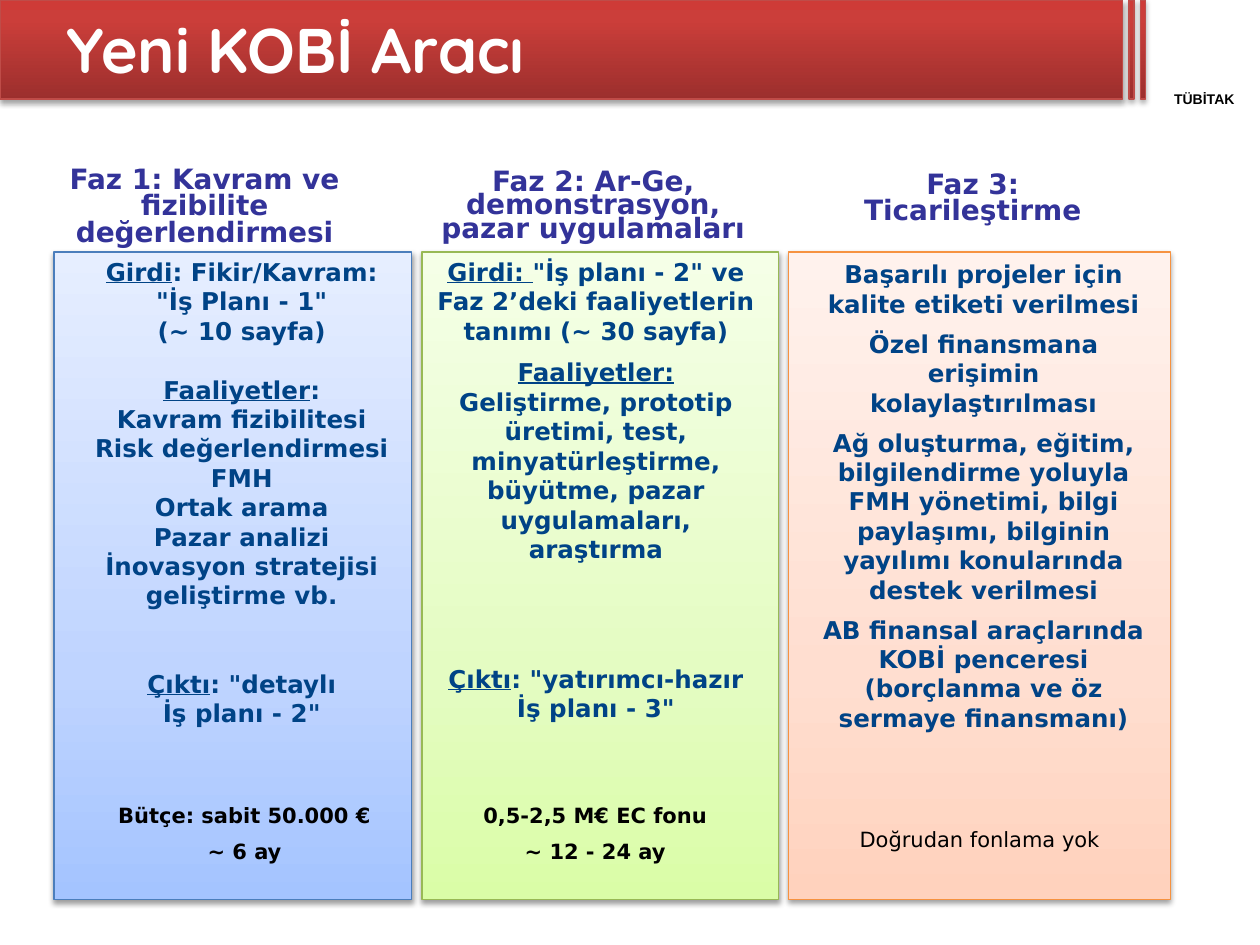
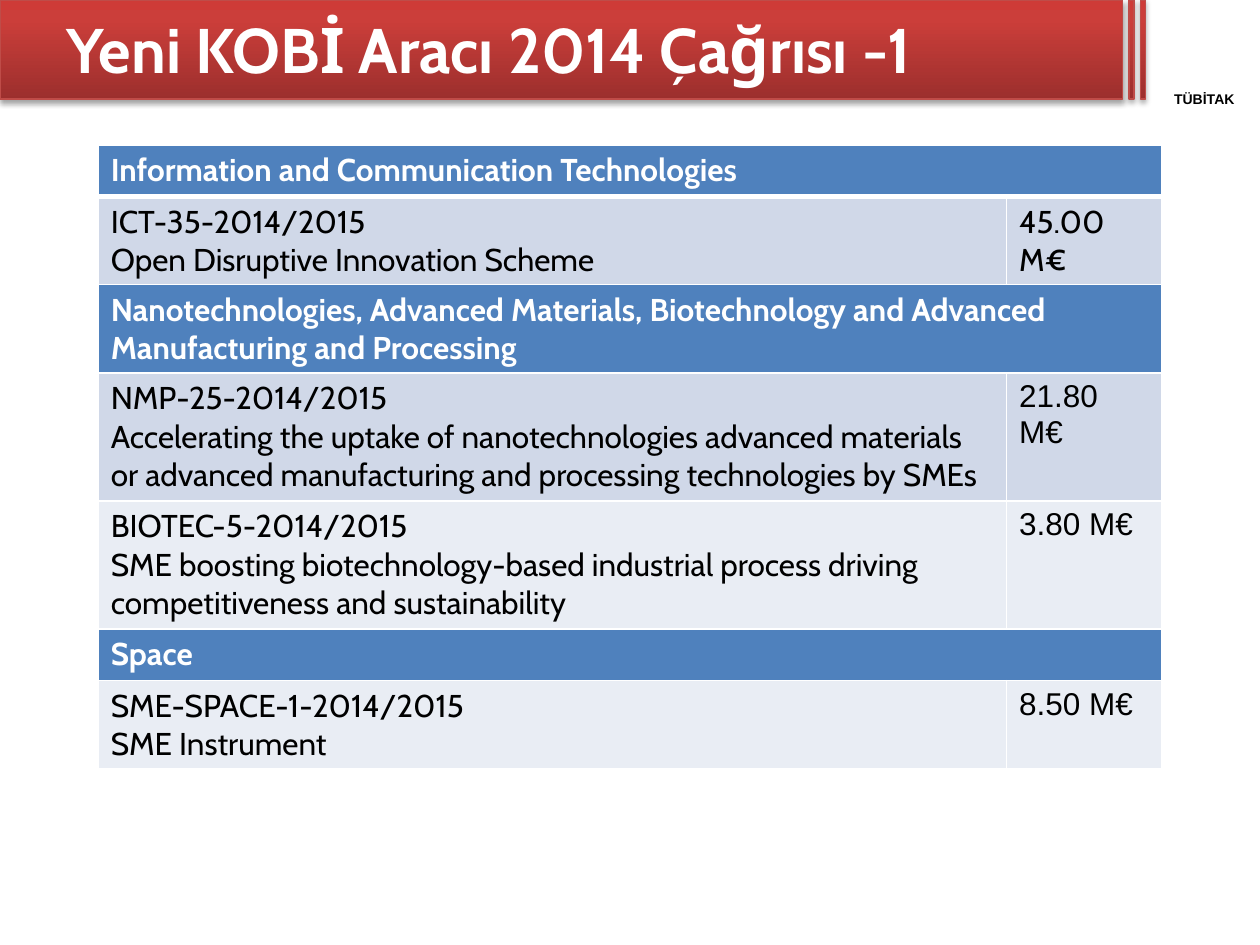
"""Build two slides about the new SME instrument: its phases and the 2014 call."""
from dataclasses import dataclass

import pptx
import pptx.dml.color
import pptx.enum.shapes
import pptx.enum.text
import pptx.oxml
import pptx.oxml.ns
import pptx.util
from pptx.util import Cm

NAMESPACE = pptx.oxml.ns.nsdecls("a")
ALIGN = pptx.enum.text.PP_ALIGN
ANCHOR = pptx.enum.text.MSO_ANCHOR

WHITE, BLACK = "FFFFFF", "000000"
HEADING_COLOR, BODY_COLOR = "333399", "004386"
BAND_STOPS = ((0, "9C2F2D"), (80, "CB3E3A"), (100, "CE3B37"))
BAND_LINE = "BF4C48"
BAND_PIECES = ((0, 22.63), (22.76, 0.1), (22.99, 0.1))
BAND_HEIGHT = 2
PANEL_TOP, PANEL_HEIGHT = 5.08, 13.05
INSET = 0.05
PHASE_FONT, TABLE_FONT = "DejaVu Sans", "Cabin"
SECTION_FILL, BLUE_FILL, GRAY_FILL = "4F81BD", "D0D8E8", "E9EDF4"


@dataclass
class Phase:
    """One column: boxes in cm, and lines as (underlined, plain, space before)."""

    panel: tuple
    stops: tuple
    line: str
    heading: str
    heading_box: tuple
    body: tuple
    body_box: tuple
    funding: tuple
    funding_box: tuple
    funding_bold: bool = True


PHASES = (
    Phase(
        panel=(1.09, 7.21),
        stops=((0, "A4C4FF"), (35, "BFD4FF"), (100, "E6EEFF")),
        line="4B7EBC",
        heading="Faz 1: Kavram ve fizibilite değerlendirmesi",
        heading_box=(1.09, 3.33, 6.07, 1.75),
        body=(
            ("Girdi", ": Fikir/Kavram:", 0),
            ("", '"İş Planı - 1"', 0),
            ("", "(~ 10 sayfa)", 0),
            ("Faaliyetler", ":", 16.8),
            ("", "Kavram fizibilitesi", 0),
            ("", "Risk değerlendirmesi", 0),
            ("", "FMH", 0),
            ("", "Ortak arama", 0),
            ("", "Pazar analizi", 0),
            ("", "İnovasyon stratejisi geliştirme vb.", 0),
            ("Çıktı", ': "detaylı', 33.6),
            ("", 'İş planı - 2"', 0),
        ),
        body_box=(1.65, 5.13, 6.45, 10.29),
        funding=(("", "Bütçe: sabit 50.000 €", 0), ("", "~ 6 ay", 6)),
        funding_box=(2.16, 16.13, 5.54, 1.4),
    ),
    Phase(
        panel=(8.51, 7.19),
        stops=((0, "DAFDA7"), (35, "E4FCC2"), (100, "F5FFE7")),
        line="98B955",
        heading="Faz 2: Ar-Ge, demonstrasyon, pazar uygulamaları",
        heading_box=(8.81, 3.43, 6.3, 1.55),
        body=(
            ("Girdi: ", '"İş planı - 2" ve Faz 2’deki faaliyetlerin '
                        "tanımı (~ 30 sayfa)", 0),
            ("Faaliyetler:", "", 7),
            ("", "Geliştirme, prototip üretimi, test, minyatürleştirme, "
                 "büyütme, pazar uygulamaları, araştırma", 0),
            ("Çıktı", ': "yatırımcı-hazır İş planı - 3"', 57.5),
        ),
        body_box=(8.74, 5.13, 6.55, 9.7),
        funding=(("", "0,5-2,5 M€ EC fonu", 0), ("", "~ 12 - 24 ay", 6)),
        funding_box=(8.89, 16.13, 6.22, 1.4),
    ),
    Phase(
        panel=(15.9, 7.7),
        stops=((0, "FFD2BD"), (35, "FFDED0"), (100, "FFF2ED")),
        line="F69240",
        heading="Faz 3: Ticarileştirme",
        heading_box=(16.51, 3.43, 6.2, 1.22),
        body=(
            ("", "Başarılı projeler için kalite etiketi verilmesi", 0),
            ("", "Özel finansmana erişimin kolaylaştırılması", 6),
            ("", "Ağ oluşturma, eğitim, bilgilendirme yoluyla FMH yönetimi, "
                 "bilgi paylaşımı, bilginin yayılımı konularında destek "
                 "verilmesi", 6),
            ("", "AB finansal araçlarında KOBİ penceresi (borçlanma ve öz "
                 "sermaye finansmanı)", 6),
        ),
        body_box=(16.31, 5.18, 7.04, 9.73),
        funding=(("", "Doğrudan fonlama yok", 0),),
        funding_box=(15.9, 16.62, 7.7, 0.6),
        funding_bold=False,
    ),
)

CALL_COLUMNS = (18.31, 3.13)
CALL_ROWS = (
    (1.04, SECTION_FILL, "Information and Communication Technologies", "", TABLE_FONT),
    (1.78, BLUE_FILL, "ICT-35-2014/2015\nOpen Disruptive Innovation Scheme",
     "45.00 M€", TABLE_FONT),
    (1.78, SECTION_FILL, "Nanotechnologies, Advanced Materials, Biotechnology and "
     "Advanced Manufacturing and Processing", "", TABLE_FONT),
    (2.58, BLUE_FILL, "NMP-25-2014/2015\nAccelerating the uptake of nanotechnologies "
     "advanced materials or advanced manufacturing and processing technologies by SMEs",
     "21.80 M€", "Arial"),
    (2.58, GRAY_FILL, "BIOTEC-5-2014/2015\nSME boosting biotechnology-based industrial "
     "process driving competitiveness and sustainability", "3.80 M€", "Arial"),
    (1.04, SECTION_FILL, "Space", "", TABLE_FONT),
    (1.78, GRAY_FILL, "SME-SPACE-1-2014/2015\nSME Instrument", "8.50 M€", "Arial"),
)


def rgb(color):
    """Turn a hex string into a colour."""
    return pptx.dml.color.RGBColor.from_string(color)


def format_font(font, name, size, color, bold):
    """Set the typeface, size, colour and weight of a font."""
    font.name, font.size, font.bold = name, pptx.util.Pt(size), bold
    font.color.rgb = rgb(color)


def add_gradient_panel(slide, box, stops, line, shadow_alpha, shadow_distance):
    """Draw a rectangle with a bottom-to-top gradient and a soft shadow."""
    shape = slide.shapes.add_shape(
        pptx.enum.shapes.MSO_SHAPE.RECTANGLE, *map(Cm, box))
    shape.fill.gradient()
    shape.fill.gradient_angle = 90
    properties = shape.element.spPr
    stop_list = properties.find(".//" + pptx.oxml.ns.qn("a:gsLst"))
    stop_list.clear()
    for position, color in stops:
        stop_list.append(pptx.oxml.parse_xml(
            f'<a:gs {NAMESPACE} pos="{position * 1000}">'
            f'<a:srgbClr val="{color}"/></a:gs>'))
    shape.line.color.rgb = rgb(line)
    shape.line.width = pptx.util.Pt(0.75)
    shape.shadow.inherit = False
    properties.find(pptx.oxml.ns.qn("a:effectLst")).append(pptx.oxml.parse_xml(
        f'<a:outerShdw {NAMESPACE} blurRad="40000" dist="{shadow_distance}" '
        'dir="5400000" rotWithShape="0"><a:srgbClr val="000000">'
        f'<a:alpha val="{shadow_alpha * 1000}"/></a:srgbClr></a:outerShdw>'))


def add_text(slide, box, lines, font, size, color, bold=True, align=ALIGN.CENTER,
             anchor=ANCHOR.TOP, insets=(INSET, INSET), line_spacing=None):
    """Place a wrapping text box whose lines may begin with an underlined part."""
    frame = slide.shapes.add_textbox(*map(Cm, box)).text_frame
    frame.word_wrap = True
    frame.vertical_anchor = anchor
    frame.margin_left = frame.margin_right = Cm(insets[0])
    frame.margin_top = frame.margin_bottom = Cm(insets[1])
    for index, (underlined, plain, space_before) in enumerate(lines):
        paragraph = frame.add_paragraph() if index else frame.paragraphs[0]
        paragraph.alignment = align
        if space_before:
            paragraph.space_before = pptx.util.Pt(space_before)
        if line_spacing:
            paragraph.line_spacing = line_spacing
        for text, underline in ((underlined, True), (plain, False)):
            if text:
                run = paragraph.add_run()
                run.text = text
                format_font(run.font, font, size, color, bold)
                run.font.underline = underline


def add_titled_slide(presentation, title, title_font):
    """Add a blank slide with the red band, the title and the institute name."""
    slide = presentation.slides.add_slide(presentation.slide_layouts[6])
    for left, width in BAND_PIECES:
        add_gradient_panel(slide, (left, 0, width, BAND_HEIGHT), BAND_STOPS,
                           BAND_LINE, 35, 23000)
    add_text(slide, (23.2, 1.83, 2.16, 0.33), [("", "TÜBİTAK", 0)],
             "Arial", 8, BLACK, insets=(0, 0))
    add_text(slide, (1.09, 0, 21.59, 1.96), [("", title, 0)], title_font, 36, WHITE,
             align=ALIGN.LEFT, anchor=ANCHOR.MIDDLE, insets=(0.25, 0.13))
    return slide


def add_phase(slide, phase, heading_spacing):
    """Draw the panel of a phase with its heading, body and funding."""
    left, width = phase.panel
    add_gradient_panel(slide, (left, PANEL_TOP, width, PANEL_HEIGHT),
                       phase.stops, phase.line, 38, 20000)
    add_text(slide, phase.heading_box, [("", phase.heading, 0)], PHASE_FONT, 16,
             HEADING_COLOR, line_spacing=heading_spacing)
    add_text(slide, phase.body_box, phase.body, PHASE_FONT, 14, BODY_COLOR)
    add_text(slide, phase.funding_box, phase.funding, PHASE_FONT, 12, BLACK,
             bold=phase.funding_bold)


def set_borders(cell, top, bottom):
    """Give a cell white borders, with top and bottom widths in points."""
    properties = cell._tc.get_or_add_tcPr()
    for index, (side, width) in enumerate(
            (("L", 1), ("R", 1), ("T", top), ("B", bottom))):
        properties.insert(index, pptx.oxml.parse_xml(
            f'<a:ln{side} {NAMESPACE} w="{width * 12700}"><a:solidFill>'
            f'<a:srgbClr val="{WHITE}"/></a:solidFill></a:ln{side}>'))


def add_call_table(slide, left, top):
    """Add the table of call topics and budgets."""
    height = sum(row[0] for row in CALL_ROWS)
    table = slide.shapes.add_table(
        len(CALL_ROWS), len(CALL_COLUMNS), Cm(left), Cm(top),
        Cm(sum(CALL_COLUMNS)), Cm(height)).table
    table.first_row = table.horz_banding = False
    for column, width in zip(table.columns, CALL_COLUMNS):
        column.width = Cm(width)
    for index, (row_height, fill, topic, budget, budget_font) in enumerate(CALL_ROWS):
        table.rows[index].height = Cm(row_height)
        is_section = fill == SECTION_FILL
        topic_cell, budget_cell = table.cell(index, 0), table.cell(index, 1)
        if is_section:
            topic_cell.merge(budget_cell)
        for cell, text, font in ((topic_cell, topic, TABLE_FONT),
                                 (budget_cell, budget, budget_font)):
            cell.fill.solid()
            cell.fill.fore_color.rgb = rgb(fill)
            set_borders(cell, 3 if index == 1 else 1, 3 if index == 0 else 1)
            if text:
                cell.text_frame.text = text
            for paragraph in cell.text_frame.paragraphs:
                for run in paragraph.runs:
                    format_font(run.font, font, 18, WHITE if is_section else BLACK,
                                is_section)


def main():
    """Build both slides and save the presentation."""
    presentation = pptx.Presentation()
    presentation.slide_width, presentation.slide_height = Cm(25.4), Cm(19.05)
    phases_slide = add_titled_slide(presentation, "Yeni KOBİ Aracı", "Quicksand")
    for phase, heading_spacing in zip(PHASES, (0.8, 0.7, 0.8)):
        add_phase(phases_slide, phase, heading_spacing)
    call_slide = add_titled_slide(
        presentation, "Yeni KOBİ Aracı 2014 Çağrısı -1", TABLE_FONT)
    add_call_table(call_slide, 1.98, 2.92)
    presentation.save("out.pptx")


if __name__ == "__main__":
    main()
